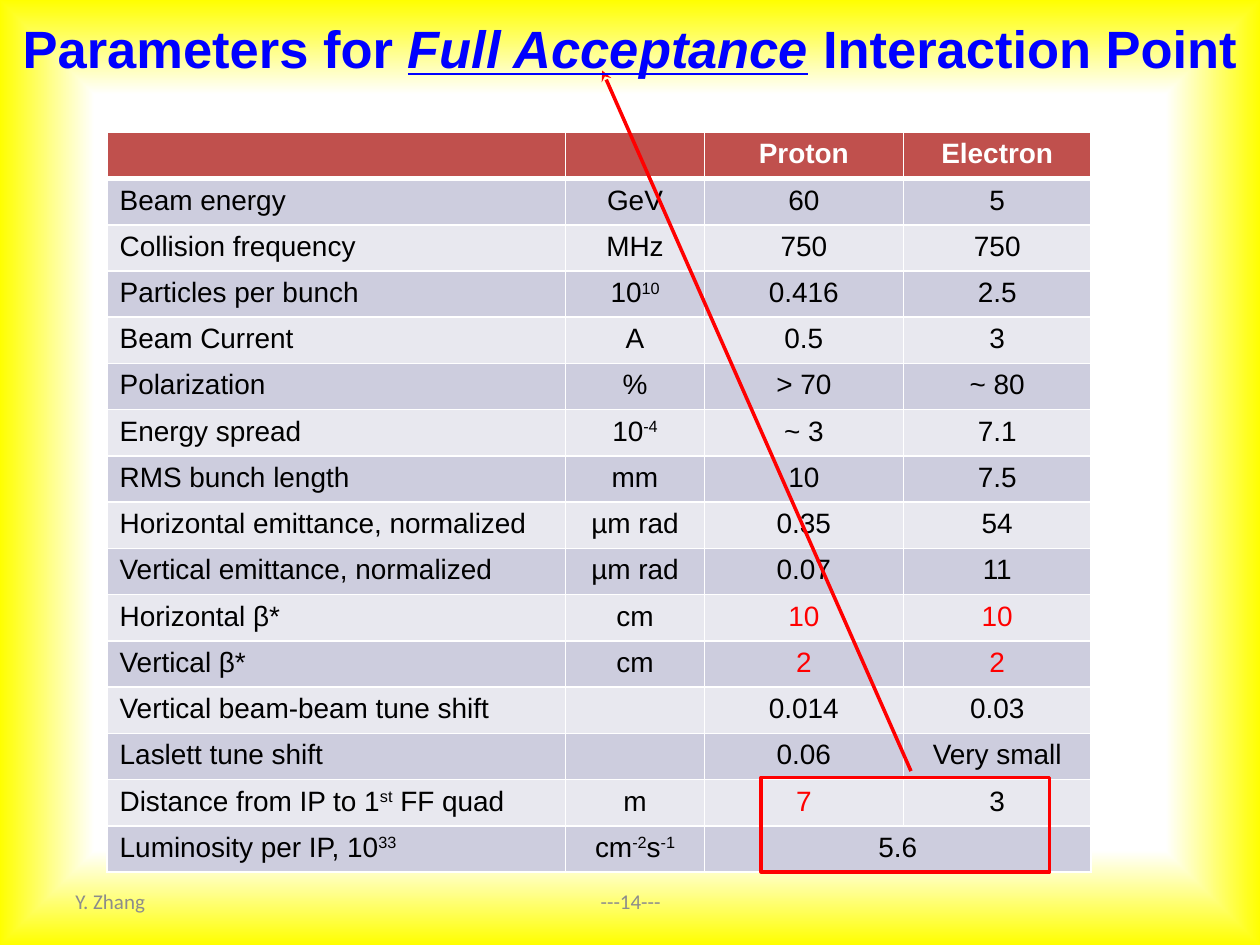
from dataclasses import dataclass

from lxml.etree import SubElement
from pptx import Presentation
from pptx.dml.color import RGBColor as RGB
from pptx.enum.shapes import MSO_CONNECTOR as CONNECTOR, MSO_SHAPE as SHAPE
from pptx.enum.text import MSO_ANCHOR as ANCHOR, PP_ALIGN as ALIGN
from pptx.oxml.ns import qn
from pptx.util import Emu, Pt

EMU_PER_PX = 9144  # 100 px to the inch


@dataclass(frozen=True)
class Theme:
    white: str = "FFFFFF"
    yellow: str = "FFFF00"
    black: str = "000000"
    red: str = "FF0000"
    blue: str = "0000FF"
    grey: str = "8C8C8C"
    header: str = "C0504D"
    bands: tuple[str, str] = ("CDCDDE", "E8E8EF")
    body_font: str = "Arial"
    footer_font: str = "Calibri"
    title_size: int = 30
    table_size: int = 16
    footer_size: int = 12
    line: int = 2
    grid: int = 1
    header_rule: int = 3


@dataclass(frozen=True)
class Row:
    """One parameter; ^ marks switch superscript on and off."""
    label: str
    unit: str
    proton: str
    electron: str
    red: tuple[int, ...] = ()


@dataclass(frozen=True)
class Footer:
    text: str
    left: int
    width: int
    align: ALIGN


T = Theme()
COLUMNS = (364, 110, 158, 149)
ROWS = (
    Row("", "", "Proton", "Electron"),
    Row("Beam energy", "GeV", "60", "5"),
    Row("Collision frequency", "MHz", "750", "750"),
    Row("Particles per bunch", "10^10", "0.416", "2.5"),
    Row("Beam Current", "A", "0.5", "3"),
    Row("Polarization", "%", "> 70", "~ 80"),
    Row("Energy spread", "10^-4", "~ 3", "7.1"),
    Row("RMS bunch length", "mm", "10", "7.5"),
    Row("Horizontal emittance, normalized", "µm rad", "0.35", "54"),
    Row("Vertical emittance, normalized", "µm rad", "0.07", "11"),
    Row("Horizontal β*", "cm", "10", "10", red=(2, 3)),
    Row("Vertical β*", "cm", "2", "2", red=(2, 3)),
    Row("Vertical beam-beam tune shift", "", "0.014", "0.03"),
    Row("Laslett tune shift", "", "0.06", "Very small"),
    Row("Distance from IP to 1^st^ FF quad", "m", "7", "3", red=(2,)),
    Row("Luminosity per IP, 10^33", "cm^-2^s^-1", "5.6", ""),
)
FOOTERS = (
    Footer("Y. Zhang", 50, 233, ALIGN.LEFT),
    Footer("---14---", 342, 317, ALIGN.CENTER),
)


def px(n: int) -> Emu:
    return Emu(n * EMU_PER_PX)


def add_run(p, text: str, size: int, color: str, font: str = T.body_font, bold: bool = False):
    r = p.add_run()
    r.text = text
    r.font.size, r.font.name, r.font.bold = Pt(size), font, bold
    r.font.color.rgb = RGB.from_string(color)
    return r


def add_text_box(s, left: int, top: int, width: int, height: int, align: ALIGN):
    """Adds a middle-anchored text box and returns its paragraph."""
    tf = s.shapes.add_textbox(px(left), px(top), px(width), px(height)).text_frame
    tf.word_wrap = True
    tf.vertical_anchor = ANCHOR.MIDDLE
    p = tf.paragraphs[0]
    p.alignment = align
    return p


def set_background(s) -> None:
    fill = s.background.fill
    fill.gradient()
    for stop, color, position in zip(fill.gradient_stops, (T.white, T.yellow), (0.8, 1)):
        stop.color.rgb = RGB.from_string(color)
        stop.position = position
    grad = s.element.find(".//" + qn("a:gradFill"))
    grad.remove(grad.find(qn("a:lin")))
    shade = SubElement(grad, qn("a:path"), path="rect")
    SubElement(shade, qn("a:fillToRect"), {side: "50000" for side in "ltrb"})


def set_borders(cell, top: int, bottom: int) -> None:
    tc_pr = cell._tc.get_or_add_tcPr()
    for side, width in (("L", T.grid), ("R", T.grid), ("T", top), ("B", bottom)):
        ln = SubElement(tc_pr, qn(f"a:ln{side}"), w=str(Pt(width)))
        SubElement(SubElement(ln, qn("a:solidFill")), qn("a:srgbClr"), val=T.white)


def fill_cell(cell, text: str, row: int, col: int, red: bool) -> None:
    is_header = row == 0
    set_borders(cell,
                top=T.header_rule if row == 1 else T.grid,
                bottom=T.header_rule if is_header else T.grid)
    cell.fill.solid()
    cell.fill.fore_color.rgb = RGB.from_string(T.header if is_header else T.bands[(row - 1) % 2])
    p = cell.text_frame.paragraphs[0]
    p.alignment = ALIGN.CENTER if col else ALIGN.LEFT
    color = T.white if is_header else T.red if red else T.black
    if not text:
        p._p.get_or_add_endParaRPr().set("sz", str(T.table_size * 100))
        return
    for i, part in enumerate(text.split("^")):
        if part:
            r = add_run(p, part, T.table_size, color, bold=is_header)
            if i % 2:
                r.font._element.set("baseline", "30000")


def add_parameter_table(s) -> None:
    table = s.shapes.add_table(len(ROWS), len(COLUMNS), px(85), px(105), px(sum(COLUMNS)), px(587)).table
    for column, width in zip(table.columns, COLUMNS):
        column.width = px(width)
    for i, row in enumerate(ROWS):
        for j, text in enumerate((row.label, row.unit, row.proton, row.electron)):
            fill_cell(table.cell(i, j), text, i, j, j in row.red)
    last = len(ROWS) - 1
    table.cell(last, 2).merge(table.cell(last, 3))


def style_line(line) -> None:
    line.color.rgb = RGB.from_string(T.red)
    line.width = Pt(T.line)


def add_highlight(s) -> None:
    """Frames the key results and points from them to the title."""
    frame = s.shapes.add_shape(SHAPE.RECTANGLE, px(604), px(617), px(229), px(75))
    frame.shadow.inherit = False
    frame.fill.background()
    style_line(frame.line)

    arrow = s.shapes.add_connector(CONNECTOR.STRAIGHT, px(478), px(56), px(723), px(612))
    style_line(arrow.line)
    SubElement(arrow.line._get_or_add_ln(), qn("a:headEnd"), type="stealth")
    SubElement(arrow._element.spPr, qn("a:effectLst"))


def add_title(s) -> None:
    p = add_text_box(s, 0, 0, 1000, 75, ALIGN.CENTER)
    for text, emphasis in (("Parameters for ", False), ("Full Acceptance", True), (" Interaction Point", False)):
        r = add_run(p, text, T.title_size, T.blue, bold=True)
        r.font.italic = r.font.underline = emphasis


def main() -> None:
    prs = Presentation()
    prs.slide_width, prs.slide_height = px(1000), px(750)
    s = prs.slides.add_slide(prs.slide_layouts[6])
    set_background(s)
    for f in FOOTERS:
        p = add_text_box(s, f.left, 695, f.width, 40, f.align)
        add_run(p, f.text, T.footer_size, T.grey, T.footer_font)
    add_parameter_table(s)
    add_highlight(s)
    add_title(s)
    prs.save("out.pptx")


if __name__ == "__main__":
    main()
